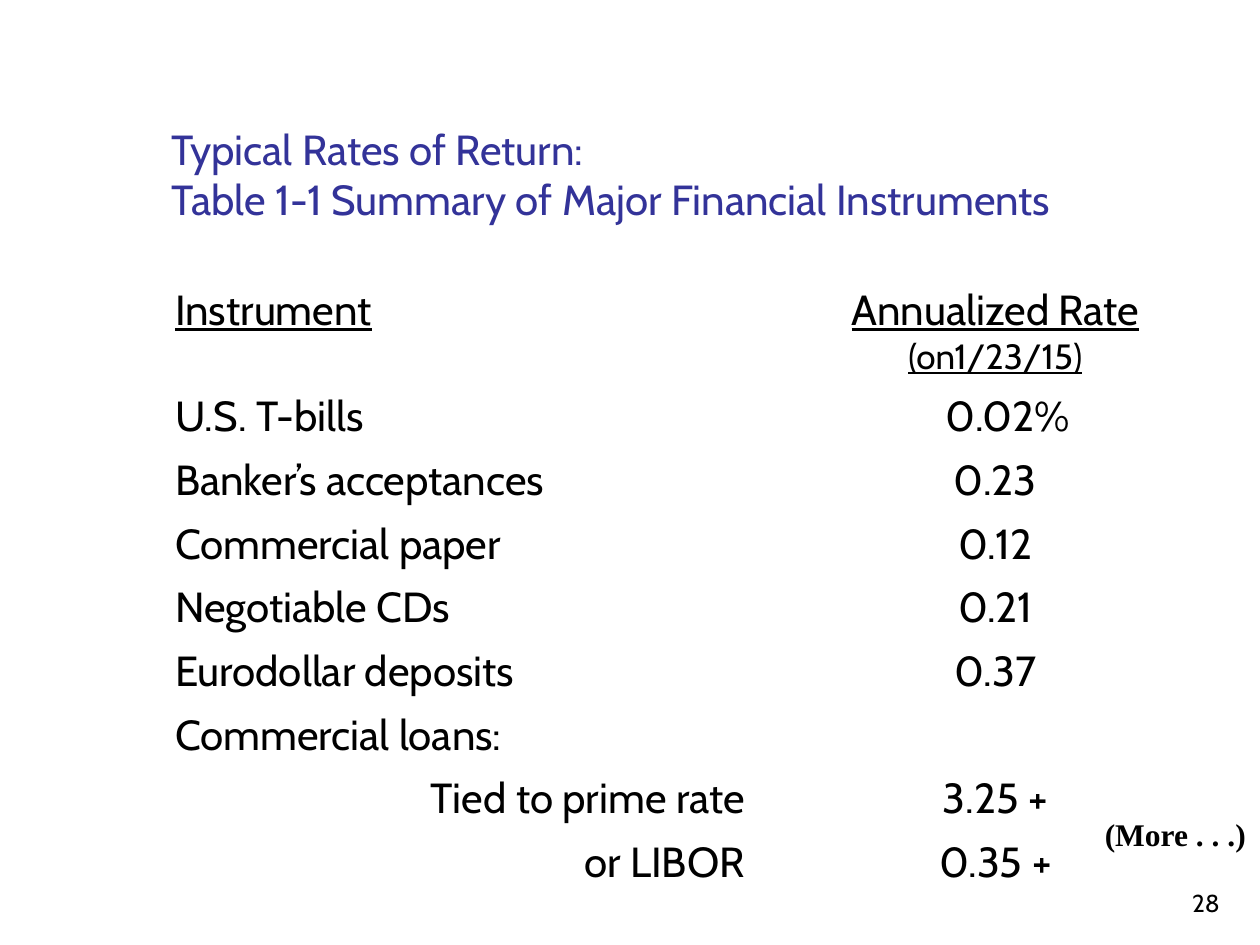
import pptx
import pptx.dml.color
import pptx.enum.text
import pptx.util
from pptx.util import Inches

BLACK = pptx.dml.color.RGBColor(0x00, 0x00, 0x00)
INDIGO = pptx.dml.color.RGBColor(0x33, 0x33, 0x99)
ALIGN = pptx.enum.text.PP_ALIGN
ANCHOR = pptx.enum.text.MSO_ANCHOR


def format_font(font, size, color=BLACK, **values):
    font.color.rgb = color
    settings = {"name": "Cabin", "size": pptx.util.Pt(size), "bold": False}
    for key, value in {**settings, **values}.items():
        setattr(font, key, value)


deck = pptx.Presentation()
deck.slide_width, deck.slide_height = Inches(10), Inches(7.5)
slide = deck.slides.add_slide(deck.slide_layouts[5])

# Title
title = slide.shapes.title
title.left, title.top = Inches(1.26), Inches(0.23)
title.width, title.height = Inches(8.52), Inches(1.6)
title.text_frame.text = "Typical Rates of Return:\vTable 1-1 Summary of Major Financial Instruments"
title.text_frame.auto_size = pptx.enum.text.MSO_AUTO_SIZE.NONE
title.text_frame.vertical_anchor = ANCHOR.BOTTOM
heading = title.text_frame.paragraphs[0]
heading.alignment = ALIGN.LEFT
for run in heading.runs:
    format_font(run.font, 24, INDIGO)

# Rates table
rates = [
    ("Instrument", "Annualized Rate "),
    ("U.S. T-bills", "0.02%"),
    ("Banker’s acceptances", "0.23"),
    ("Commercial paper", "0.12"),
    ("Negotiable CDs", "0.21"),
    ("Eurodollar deposits", "0.37"),
    ("Commercial loans:", ""),
    ("Tied to prime rate", "3.25 +"),
    ("or LIBOR", "0.35 +"),
]
loan_bases = ("Tied to prime rate", "or LIBOR")
table = slide.shapes.add_table(
    len(rates), 2, Inches(1.29), Inches(2.21), Inches(8.5), Inches(4.83)
).table
table.first_row = table.horz_banding = False
table.columns[0].width, table.columns[1].width = Inches(4.72), Inches(3.78)

for row, texts in enumerate(rates):
    table.rows[row].height = Inches(0.5 if row else 0.83)
    for column, text in enumerate(texts):
        cell = table.cell(row, column)
        cell.fill.background()
        paragraph = cell.text_frame.paragraphs[0]
        if column == 1:
            paragraph.alignment = ALIGN.CENTER
        elif text in loan_bases:
            paragraph.alignment = ALIGN.RIGHT
        format_font(paragraph.font, 24)
        if text:
            run = paragraph.add_run()
            run.text = text
            format_font(run.font, 24, underline=row == 0)

quote_date = table.cell(0, 1).text_frame.paragraphs[0].add_run()
quote_date.text = "(on1/23/15)"
format_font(quote_date.font, 20, underline=True)
# The percent sign pushes its figure to the right of the others
table.cell(1, 1).margin_left = Inches(0.3)

# Continuation note and page number
notes = [
    ("(More . . .)", (8.67, 6.42, 1.33, 0.4), ALIGN.LEFT, ANCHOR.TOP,
     {"size": 18, "name": "Times New Roman", "bold": True}),
    ("28", (7.7, 6.83, 2.08, 0.5), ALIGN.RIGHT, ANCHOR.BOTTOM, {"size": 14}),
]
for text, place, alignment, anchor, font_values in notes:
    frame = slide.shapes.add_textbox(*map(Inches, place)).text_frame
    frame.word_wrap = True
    frame.vertical_anchor = anchor
    paragraph = frame.paragraphs[0]
    paragraph.alignment = alignment
    run = paragraph.add_run()
    run.text = text
    format_font(run.font, **font_values)

deck.save("out.pptx")
